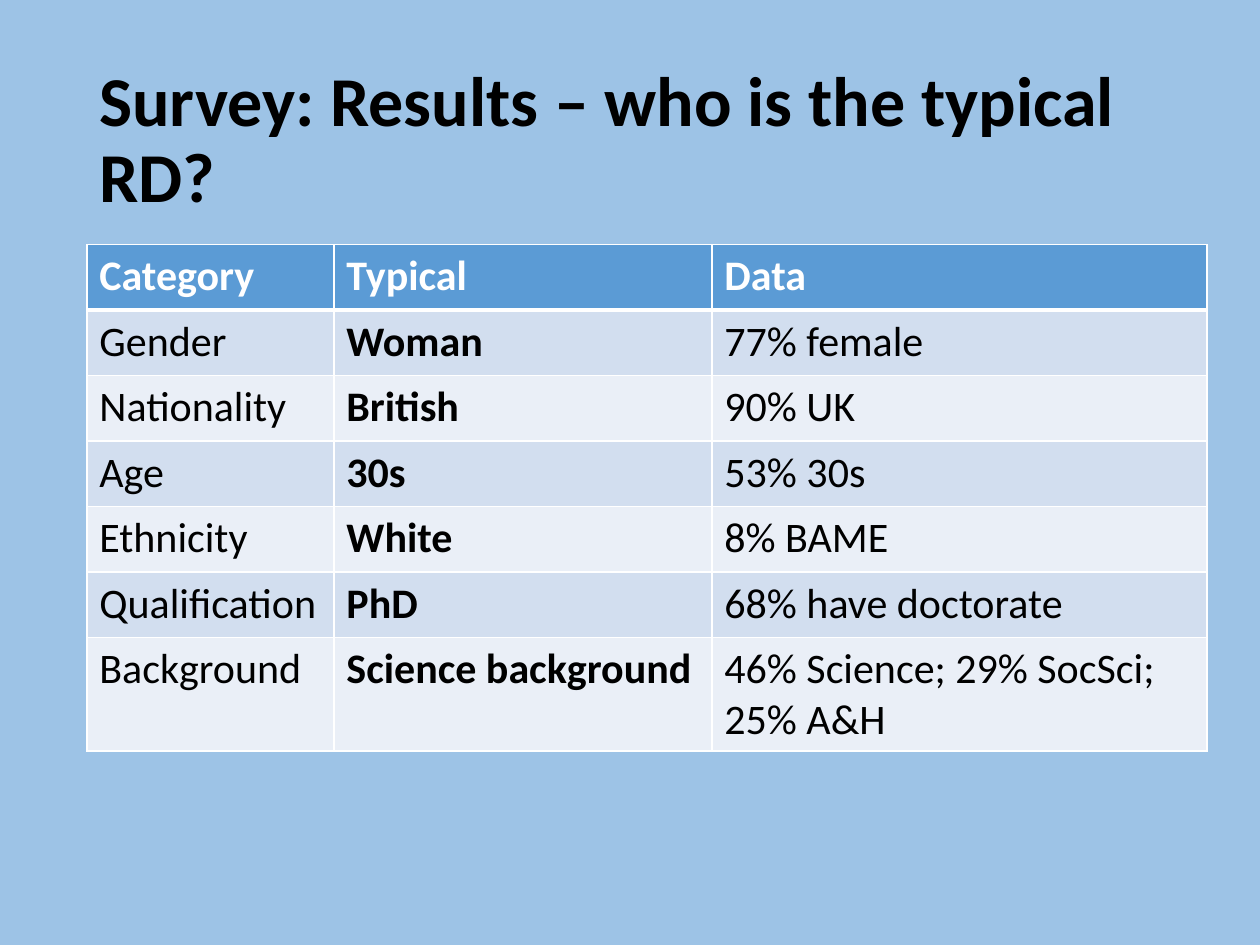
from lxml import etree
from pptx import Presentation
from pptx import util as u
from pptx.dml import color
from pptx.enum import text
from pptx.oxml import ns


def add_run(paragraph, wording, size, hex_color, bold):
    run = paragraph.add_run()
    run.text = wording
    run.font.name = "Calibri"
    run.font.size = u.Pt(size)
    run.font.bold = bold
    run.font.color.rgb = color.RGBColor.from_string(hex_color)


def add_border(cell, side, points):
    """Draw one white cell edge; call before filling, as the schema puts lines first."""
    line = etree.SubElement(
        cell._tc.get_or_add_tcPr(), ns.qn(f"a:ln{side}"), w=str(u.Pt(points))
    )
    fill = etree.SubElement(line, ns.qn("a:solidFill"))
    etree.SubElement(fill, ns.qn("a:srgbClr"), val="FFFFFF")


presentation = Presentation()
presentation.slide_width = u.Cm(25.4)
presentation.slide_height = u.Cm(19.05)
slide = presentation.slides.add_slide(presentation.slide_layouts[6])
slide.background.fill.solid()
slide.background.fill.fore_color.rgb = color.RGBColor.from_string("9DC3E6")

# Title
left, width = u.Cm(1.75), u.Cm(22.58)
title = slide.shapes.add_textbox(left, u.Cm(1.02), width, u.Cm(3.68))
title.text_frame.word_wrap = True
title.text_frame.vertical_anchor = text.MSO_ANCHOR.MIDDLE
paragraph = title.text_frame.paragraphs[0]
paragraph.line_spacing = 0.9
add_run(paragraph, "Survey: Results – who is the typical RD?", 40, "000000", True)

# Results table
rows = [
    ("Category", "Typical", "Data"),
    ("Gender", "Woman", "77% female"),
    ("Nationality", "British", "90% UK"),
    ("Age", "30s", "53% 30s"),
    ("Ethnicity", "White", "8% BAME"),
    ("Qualification", "PhD", "68% have doctorate"),
    ("Background", "Science background", "46% Science; 29% SocSci; 25% A&H"),
]
column_widths = [4.98, 7.62, 9.98]
row_height = u.Cm(1.32)
table = slide.shapes.add_table(
    len(rows), len(column_widths), left, u.Cm(4.93), width, row_height * len(rows)
).table
for column, column_width in zip(table.columns, column_widths):
    column.width = u.Cm(column_width)

for row_index, row in enumerate(rows):
    table.rows[row_index].height = row_height
    is_header = row_index == 0
    if is_header:
        fill_color = "5B9BD5"
    else:
        fill_color = "D2DEEF" if row_index % 2 else "EAEFF7"
    edges = {
        "L": 1,
        "R": 1,
        "T": 3 if row_index == 1 else 1,
        "B": 3 if is_header else 1,
    }
    for column_index, wording in enumerate(row):
        cell = table.cell(row_index, column_index)
        for side, points in edges.items():
            add_border(cell, side, points)
        cell.fill.solid()
        cell.fill.fore_color.rgb = color.RGBColor.from_string(fill_color)
        add_run(
            cell.text_frame.paragraphs[0],
            wording,
            24,
            "FFFFFF" if is_header else "000000",
            is_header or column_index == 1,
        )

presentation.save("out.pptx")
